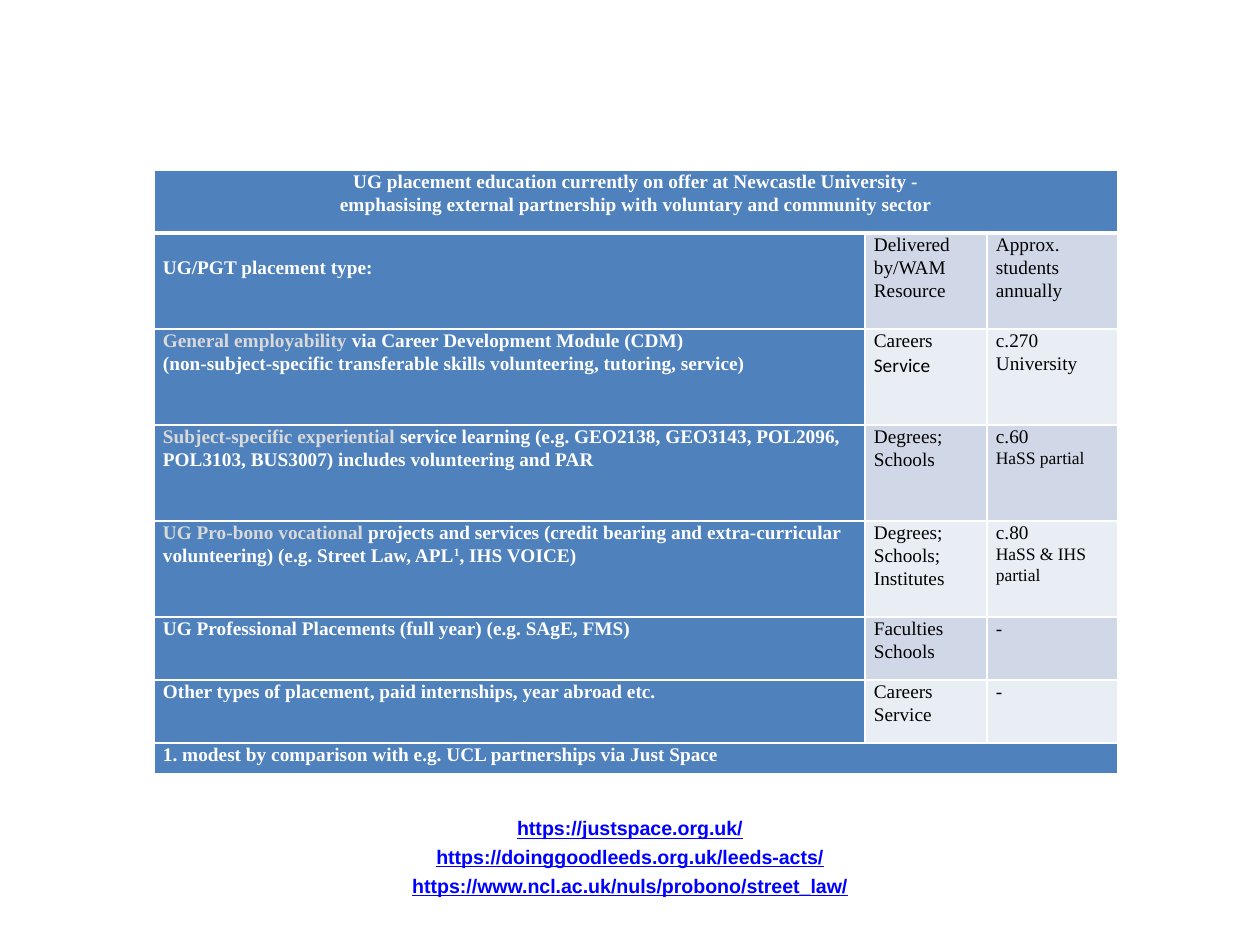
from dataclasses import dataclass

import pptx
import pptx.dml.color
import pptx.enum.text
import pptx.oxml
import pptx.oxml.ns
import pptx.util

PX = 914400 / 126


@dataclass(frozen=True)
class Theme:
    serif: str = "Times New Roman"
    sans: str = "Calibri"
    link_font: str = "Arial"
    heading_fill: str = "4F81BD"
    band_dark: str = "D0D8E8"
    band_light: str = "E9EDF4"
    white: str = "FFFFFF"
    black: str = "000000"
    accent: str = "D9D9D9"
    link: str = "0000FF"
    body_size: float = 11
    small_size: float = 10
    link_size: float = 11.2
    line_spacing: float = 1.07


THEME = Theme()
ALIGN = pptx.enum.text.PP_ALIGN


@dataclass(frozen=True)
class Run:
    text: str
    color: str = THEME.black
    bold: bool = False
    size: float = THEME.body_size
    font: str = THEME.serif
    underline: bool = False
    raised: bool = False


Paragraphs = list[list[Run]]


@dataclass(frozen=True)
class Offer:
    placement: Paragraphs
    delivered_by: Paragraphs
    students: Paragraphs
    height: int
    placement_top: int = 0


def px(length: int) -> int:
    return round(length * PX)


def strong(text: str, color: str = THEME.white, raised: bool = False) -> Run:
    return Run(text, color, bold=True, raised=raised)


def plain(*lines: str) -> Paragraphs:
    return [[Run(line)] for line in lines]


def small(text: str) -> list[Run]:
    return [Run(text, size=THEME.small_size)]


def rgb(color: str) -> pptx.dml.color.RGBColor:
    return pptx.dml.color.RGBColor.from_string(color)


def write(frame, paragraphs: Paragraphs, align=ALIGN.LEFT,
          spacing: float = THEME.line_spacing, gap: float = 0) -> None:
    frame.word_wrap = True
    for index, runs in enumerate(paragraphs):
        paragraph = frame.paragraphs[0] if index == 0 else frame.add_paragraph()
        paragraph.alignment = align
        paragraph.line_spacing = spacing
        paragraph.space_before = pptx.util.Pt(gap if index else 0)
        for part in runs:
            run = paragraph.add_run()
            run.text = part.text
            run.font.name = part.font
            run.font.size = pptx.util.Pt(part.size)
            run.font.bold = part.bold
            run.font.underline = part.underline
            run.font.color.rgb = rgb(part.color)
            if part.raised:
                run.font._element.set("baseline", "30000")


def draw_borders(cell, top: int = 1, bottom: int = 1) -> None:
    properties = cell._tc.get_or_add_tcPr()
    for side, points in (("L", 1), ("R", 1), ("T", top), ("B", bottom)):
        properties.append(pptx.oxml.parse_xml(
            f'<a:ln{side} {pptx.oxml.ns.nsdecls("a")} w="{pptx.util.Pt(points)}">'
            f'<a:solidFill><a:srgbClr val="{THEME.white}"/></a:solidFill></a:ln{side}>'))


def fill_cell(cell, paragraphs: Paragraphs, fill: str, align=ALIGN.LEFT, inset_top: int = 0) -> None:
    cell.margin_left = cell.margin_right = px(9)
    cell.margin_top = px(inset_top)
    cell.margin_bottom = 0
    cell.fill.solid()
    cell.fill.fore_color.rgb = rgb(fill)
    write(cell.text_frame, paragraphs, align)


TITLE = [
    [strong("UG placement education currently on offer at Newcastle University -")],
    [strong("emphasising external partnership with voluntary and community sector")],
]
OFFERS = [
    Offer([[strong("UG/PGT placement type:")]],
          plain("Delivered by/WAM", "Resource"),
          plain("Approx. students annually"), 96, placement_top=23),
    Offer([[strong("General employability ", THEME.accent),
            strong("via Career Development Module (CDM)")],
           [strong("(non-subject-specific transferable skills volunteering, tutoring, service)")]],
          [[Run("Careers")], [Run("Service", font=THEME.sans)]],
          plain("c.270", "University"), 96),
    Offer([[strong("Subject-specific experiential ", THEME.accent),
            strong("service learning (e.g. GEO2138, GEO3143, POL2096, POL3103, BUS3007) "
                   "includes volunteering and PAR")]],
          plain("Degrees;", "Schools"),
          [*plain("c.60"), small("HaSS partial")], 96),
    Offer([[strong("UG Pro-bono vocational ", THEME.accent),
            strong("projects and services (credit bearing and extra-curricular volunteering) "
                   "(e.g. Street Law, APL"),
            strong("1", raised=True),
            strong(", IHS VOICE)")]],
          plain("Degrees; Schools;", "Institutes"),
          [*plain("c.80"), small("HaSS & IHS partial")], 96),
    Offer([[strong("UG Professional Placements (full year) (e.g. SAgE, FMS)")]],
          plain("Faculties", "Schools"), plain("-"), 63),
    Offer([[strong("Other types of placement, paid internships, year abroad etc.")]],
          plain("Careers", "Service"), plain("-"), 63),
]
FOOTNOTE = [[strong("1. modest by comparison with e.g. UCL partnerships via Just Space")]]
LINKS = [
    "https://justspace.org.uk/",
    "https://doinggoodleeds.org.uk/leeds-acts/",
    "https://www.ncl.ac.uk/nuls/probono/street_law/",
]
COLUMN_WIDTHS = [711, 122, 131]
TITLE_HEIGHT = 63
FOOTNOTE_HEIGHT = 31


def draw_offers(slide) -> None:
    heights = [TITLE_HEIGHT, *(offer.height for offer in OFFERS), FOOTNOTE_HEIGHT]
    placements = slide.shapes.add_table(
        len(heights), len(COLUMN_WIDTHS), px(154), px(170),
        px(sum(COLUMN_WIDTHS)), px(sum(heights))).table
    placements.horz_banding = False
    for column, width in zip(placements.columns, COLUMN_WIDTHS):
        column.width = px(width)
    for index, (row, height) in enumerate(zip(placements.rows, heights)):
        row.height = px(height)
        for cell in row.cells:
            draw_borders(cell, top=3 if index == 1 else 1, bottom=3 if index == 0 else 1)

    last = len(heights) - 1
    for index, wording, align in ((0, TITLE, ALIGN.CENTER), (last, FOOTNOTE, ALIGN.LEFT)):
        banner = placements.cell(index, 0)
        banner.merge(placements.cell(index, len(COLUMN_WIDTHS) - 1))
        fill_cell(banner, wording, THEME.heading_fill, align)

    for index, offer in enumerate(OFFERS, start=1):
        band = THEME.band_dark if index % 2 else THEME.band_light
        fill_cell(placements.cell(index, 0), offer.placement, THEME.heading_fill,
                  inset_top=offer.placement_top)
        fill_cell(placements.cell(index, 1), offer.delivered_by, band)
        fill_cell(placements.cell(index, 2), offer.students, band)


def draw_links(slide) -> None:
    links = slide.shapes.add_textbox(px(63), px(810), px(1134), px(78))
    write(links.text_frame,
          [[Run(address, THEME.link, True, THEME.link_size, THEME.link_font, underline=True)]
           for address in LINKS],
          ALIGN.CENTER, spacing=1.0, gap=3)


def main() -> None:
    presentation = pptx.Presentation()
    presentation.slide_width = px(1260)
    presentation.slide_height = px(945)
    slide = presentation.slides.add_slide(presentation.slide_layouts[6])
    draw_offers(slide)
    draw_links(slide)
    presentation.save("out.pptx")


if __name__ == "__main__":
    main()
